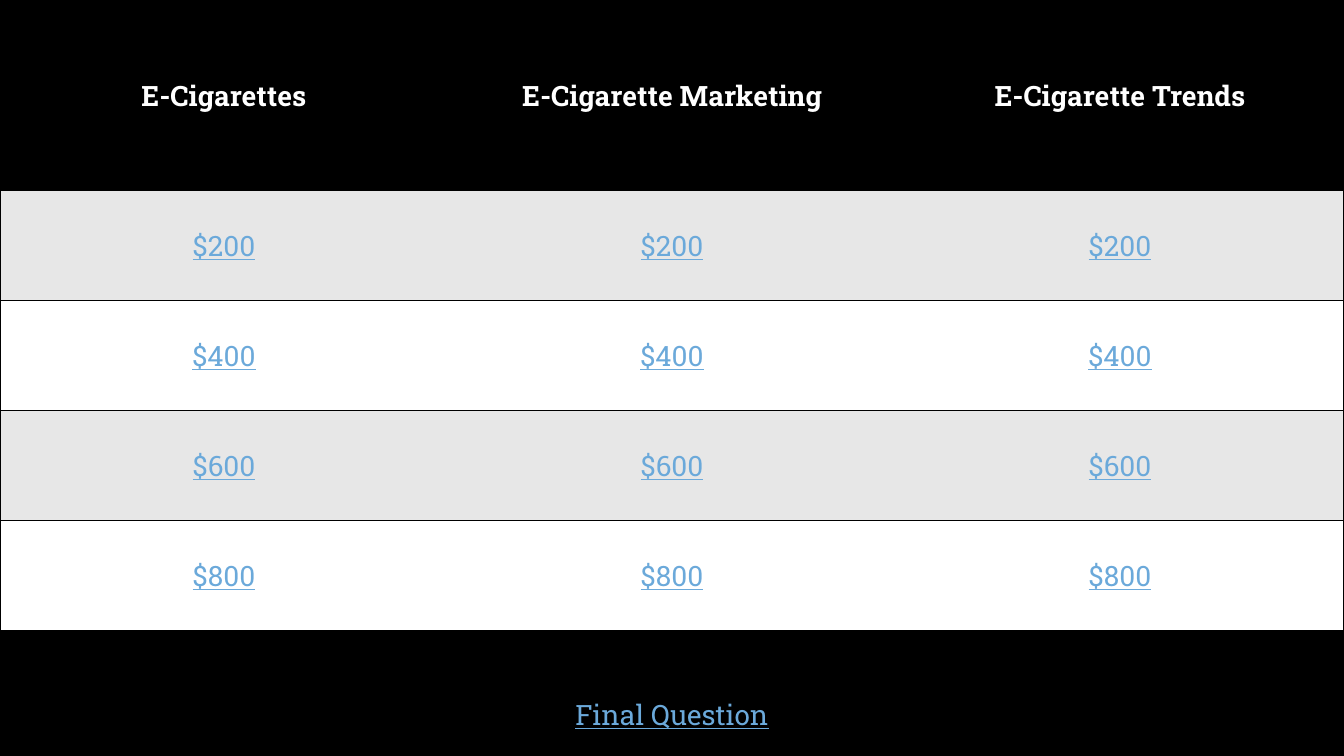
from lxml import etree
from pptx import Presentation
from pptx import util as u
from pptx.dml.color import RGBColor
from pptx.enum import text
from pptx.oxml.ns import qn

BLACK, WHITE, GREY, BLUE = "000000", "FFFFFF", "E7E7E7", "6BA9DA"
CATEGORIES = ["E-Cigarettes", "E-Cigarette Marketing", "E-Cigarette Trends"]
PRICES = ["$200", "$400", "$600", "$800"]


def color(hex_code):
    return RGBColor.from_string(hex_code)


class Board:
    """Game board slide, measured on a grid of 100 columns by 100 rows."""

    font, size = "Roboto Slab", 20

    def __init__(self, presentation):
        self.width = presentation.slide_width
        self.height = presentation.slide_height
        self.slide = presentation.slides.add_slide(presentation.slide_layouts[6])
        self.slide.background.fill.solid()
        self.slide.background.fill.fore_color.rgb = color(BLACK)

    def columns(self, count):
        return u.Emu(round(self.width * count / 100))

    def rows(self, count):
        return u.Emu(round(self.height * count / 100))

    def area(self, left, top, width, height):
        return self.columns(left), self.rows(top), self.columns(width), self.rows(height)

    def set_words(self, frame, words, hex_code, bold=False, underline=False):
        frame.text = words
        paragraph = frame.paragraphs[0]
        paragraph.alignment = text.PP_ALIGN.CENTER
        font = paragraph.runs[0].font
        font.name, font.size = self.font, u.Pt(self.size)
        font.bold, font.underline = bold, underline
        font.color.rgb = color(hex_code)

    def border(self, cell, side, hex_code=None):
        line = etree.SubElement(cell._tc.get_or_add_tcPr(), qn(f"a:ln{side}"), w=str(u.Pt(1)))
        if hex_code:
            fill = etree.SubElement(line, qn("a:solidFill"))
            etree.SubElement(fill, qn("a:srgbClr"), val=hex_code)
        else:
            etree.SubElement(line, qn("a:noFill"))

    def table(self, header, body, header_height, row_height):
        lines = [header] + body
        total = header_height + row_height * len(body)
        table = self.slide.shapes.add_table(
            len(lines), len(header), *self.area(0, 0, 100, total)).table
        for column in table.columns:
            column.width = self.columns(100 / len(header))
        for r, line in enumerate(lines):
            table.rows[r].height = self.rows(row_height if r else header_height)
            for c, words in enumerate(line):
                cell = table.cell(r, c)
                # Horizontal rules everywhere, vertical ones only on the outside
                self.border(cell, "L", BLACK if c == 0 else None)
                self.border(cell, "R", BLACK if c == len(header) - 1 else None)
                self.border(cell, "T", BLACK)
                self.border(cell, "B", BLACK)
                cell.fill.solid()
                cell.fill.fore_color.rgb = color(BLACK if r == 0 else GREY if r % 2 else WHITE)
                cell.vertical_anchor = text.MSO_ANCHOR.MIDDLE
                self.set_words(cell.text_frame, words, BLUE if r else WHITE,
                               bold=r == 0, underline=r > 0)

    def label(self, words, left, top, width, height):
        frame = self.slide.shapes.add_textbox(*self.area(left, top, width, height)).text_frame
        frame.word_wrap = True
        frame.auto_size = text.MSO_AUTO_SIZE.SHAPE_TO_FIT_TEXT
        self.set_words(frame, words, BLUE, underline=True)


def main():
    presentation = Presentation()
    presentation.slide_width = u.Inches(13.33)
    presentation.slide_height = u.Inches(7.5)
    board = Board(presentation)

    # Categories with one row per price
    board.table(CATEGORIES, [[price] * len(CATEGORIES) for price in PRICES],
                header_height=25.2, row_height=14.56)

    # Closing round
    board.label("Final Question", left=41.7, top=91.6, width=16.6, height=5.87)

    presentation.save("out.pptx")


if __name__ == "__main__":
    main()
